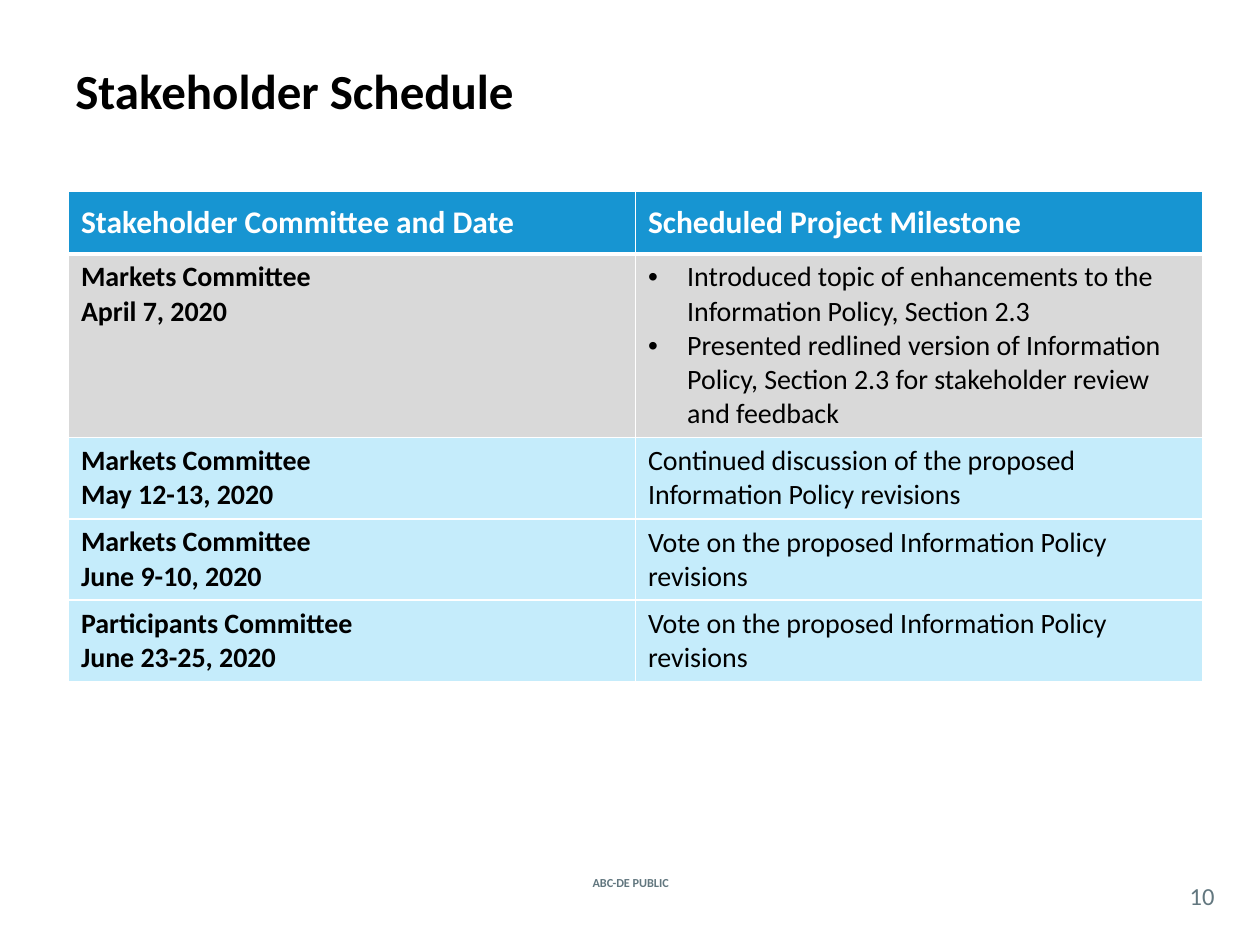
from lxml import etree
from pptx import Presentation
from pptx import util as u
from pptx.dml.color import RGBColor
from pptx.enum import text
from pptx.oxml.ns import qn

FONT = "Calibri"
BLACK, WHITE, SLATE = "000000", "FFFFFF", "62777F"
BLUE, GREY, PALE = "1795D2", "D9D9D9", "C5ECFB"

HEADERS = ["Stakeholder Committee and Date", "Scheduled Project Milestone"]
MEETINGS = [
    ("Markets Committee", "April 7, 2020", GREY, [
        "Introduced topic of enhancements to the Information Policy, Section 2.3",
        "Presented redlined version of Information Policy, Section 2.3 "
        "for stakeholder review and feedback"]),
    ("Markets Committee", "May 12-13, 2020", PALE,
     ["Continued discussion of the proposed Information Policy revisions"]),
    ("Markets Committee", "June 9-10, 2020", PALE,
     ["Vote on the proposed Information Policy revisions"]),
    ("Participants Committee", "June 23-25, 2020", PALE,
     ["Vote on the proposed Information Policy revisions"]),
]


def rgb(value):
    return RGBColor.from_string(value)


def add_bullet(p):
    pPr = p._p.get_or_add_pPr()
    indent = u.Cm(0.79)
    pPr.set("marL", str(indent))
    pPr.set("indent", str(-indent))
    etree.SubElement(pPr, qn("a:buFont")).set("typeface", "Arial")
    etree.SubElement(pPr, qn("a:buChar")).set("char", "•")


def write(tf, lines, size, color, bold=False, align=None, bullets=False):
    for i, line in enumerate(lines):
        p = tf.add_paragraph() if i else tf.paragraphs[0]
        if bullets:
            add_bullet(p)
        if align is not None:
            p.alignment = align
        r = p.add_run()
        r.text = line
        for name, value in {"name": FONT, "size": u.Pt(size), "bold": bold}.items():
            setattr(r.font, name, value)
        r.font.color.rgb = rgb(color)


def add_label(s, box, line, size, color, inset=None, **style):
    tf = s.shapes.add_textbox(*map(u.Cm, box)).text_frame
    tf.word_wrap = True
    tf.vertical_anchor = text.MSO_ANCHOR.MIDDLE
    if inset is not None:
        for side in ("left", "top", "right", "bottom"):
            setattr(tf, f"margin_{side}", u.Cm(inset))
    write(tf, [line], size, color, **style)


def set_borders(cell, top, bottom):
    tcPr = cell._tc.get_or_add_tcPr()
    for side, width in {"L": 1, "R": 1, "T": top, "B": bottom}.items():
        ln = etree.SubElement(tcPr, qn(f"a:ln{side}"), w=str(u.Pt(width)))
        fill = etree.SubElement(ln, qn("a:solidFill"))
        etree.SubElement(fill, qn("a:srgbClr"), val=WHITE)


def fill_cell(cell, lines, fill, anchor, top=1, bottom=1, **style):
    set_borders(cell, top, bottom)
    cell.fill.solid()
    cell.fill.fore_color.rgb = rgb(fill)
    cell.vertical_anchor = anchor
    write(cell.text_frame, lines, **style)


def add_schedule(s, left, top, width):
    heights = [1.27, 3.7] + [1.64] * 3
    table = s.shapes.add_table(
        len(heights), 2, *map(u.Cm, (left, top, width, sum(heights)))).table
    for column in table.columns:
        column.width = u.Cm(width / 2)
    for row, height in zip(table.rows, heights):
        row.height = u.Cm(height)
    middle = text.MSO_ANCHOR.MIDDLE
    for col, header in enumerate(HEADERS):
        fill_cell(table.cell(0, col), [header], BLUE, middle, bottom=3,
                  size=18, color=WHITE, bold=True)
    for row, (committee, date, fill, milestones) in enumerate(MEETINGS, 1):
        style = {"top": 3 if row == 1 else 1, "size": 16, "color": BLACK}
        fill_cell(table.cell(row, 0), [committee, date], fill,
                  text.MSO_ANCHOR.TOP, bold=True, **style)
        fill_cell(table.cell(row, 1), milestones, fill, middle,
                  bullets=len(milestones) > 1, **style)


def add_footer(s, left, top):
    center = text.PP_ALIGN.CENTER
    add_label(s, (left, top, 3.73, 0.43), "ABC-DE PUBLIC", 7, SLATE,
              bold=True, align=center)
    add_label(s, (left + 12.85, top + 0.1, 1.07, 0.74), "10", 14, SLATE,
              inset=0, align=center)


def main():
    prs = Presentation()
    prs.slide_width, prs.slide_height = u.Cm(25.4), u.Cm(19.05)
    s = prs.slides.add_slide(prs.slide_layouts[6])
    add_label(s, (1.27, 1.07, 22.86, 1.47), "Stakeholder Schedule", 28, BLACK, bold=True)
    add_schedule(s, 1.38, 3.85, 22.86)
    add_footer(s, 10.85, 17.58)
    prs.save("out.pptx")


if __name__ == "__main__":
    main()
